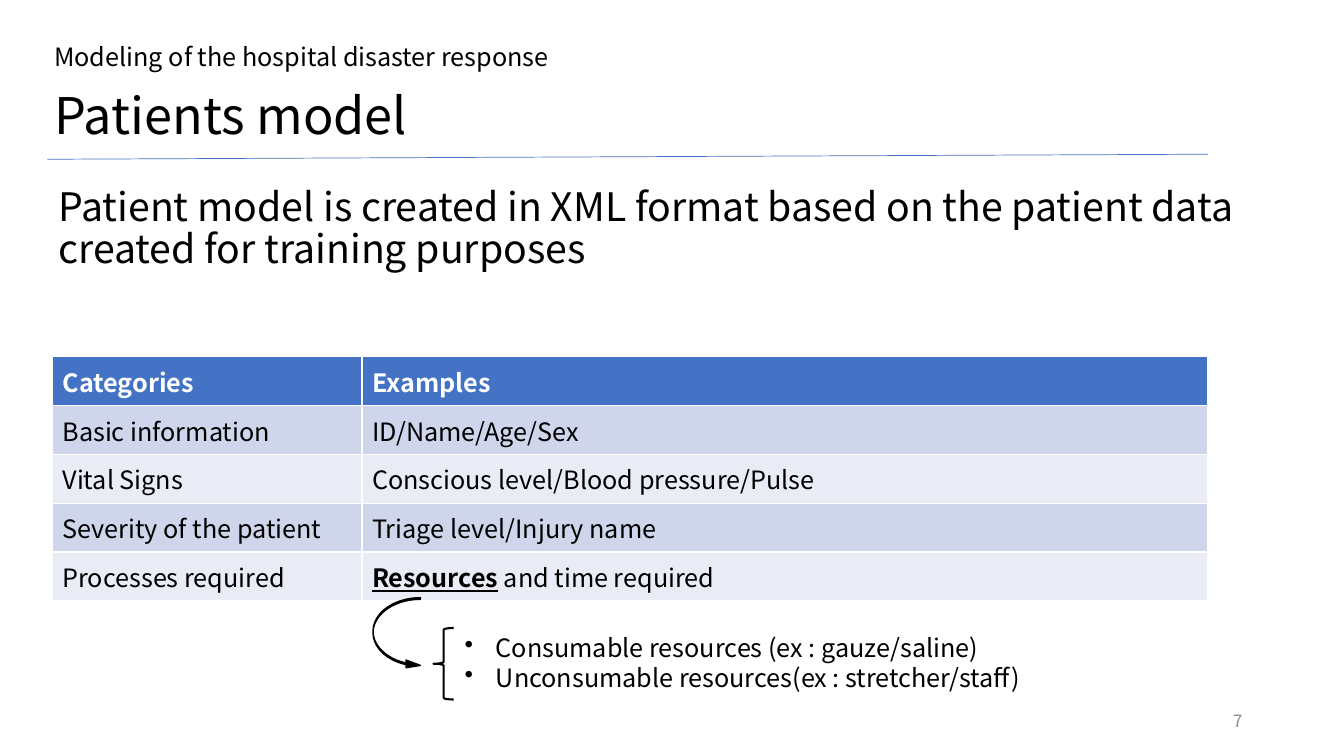
from dataclasses import dataclass

from lxml import etree
from pptx import Presentation
from pptx.dml.color import RGBColor
from pptx.enum.shapes import MSO_CONNECTOR, MSO_SHAPE
from pptx.enum.text import MSO_ANCHOR, MSO_AUTO_SIZE, PP_ALIGN
from pptx.oxml.ns import qn
from pptx.util import Inches, Pt

STRAIGHT = MSO_CONNECTOR.STRAIGHT
LEFT_BRACE = MSO_SHAPE.LEFT_BRACE
CURVED_ARROW = MSO_SHAPE.CURVED_RIGHT_ARROW
TOP, MIDDLE = MSO_ANCHOR.TOP, MSO_ANCHOR.MIDDLE
LEFT, RIGHT = PP_ALIGN.LEFT, PP_ALIGN.RIGHT
NO_FIT = MSO_AUTO_SIZE.NONE


@dataclass(frozen=True)
class Theme:
    """Hold the font, colours and type sizes of the slide."""
    font: str = "Noto Sans CJK JP"
    black: str = "000000"
    white: str = "FFFFFF"
    gray: str = "8C8C8C"
    accent: str = "4472C4"
    bands: tuple = ("CFD5EA", "E9EBF5")
    title: int = 36
    body: int = 28
    text: int = 18
    number: int = 12


THEME = Theme()
CATEGORIES = [
    ("Categories", "Examples"),
    ("Basic information", "ID/Name/Age/Sex"),
    ("Vital Signs", "Conscious level/Blood pressure/Pulse"),
    ("Severity of the patient", "Triage level/Injury name"),
    ("Processes required", "Resources"),
]
RESOURCES = [
    "Consumable resources (ex : gauze/saline)",
    "Unconsumable resources(ex : stretcher/staff)",
]


def color(value):
    """Turn a hex string into a colour."""
    return RGBColor.from_string(value)


def format_runs(text_frame, size, ink=THEME.black, bold=False):
    """Apply the type style to every run of a text frame."""
    for paragraph in text_frame.paragraphs:
        for run in paragraph.runs:
            run.font.name = THEME.font
            run.font.size = Pt(size)
            run.font.bold = bold
            run.font.color.rgb = color(ink)


def set_bullet(paragraph, indent=0, character=None):
    """Set the hanging indent and the bullet of a paragraph."""
    properties = paragraph._p.get_or_add_pPr()
    properties.set("marL", str(Inches(indent)))
    properties.set("indent", str(-Inches(indent)))
    if character:
        etree.SubElement(properties, qn("a:buChar")).set("char", character)
    else:
        etree.SubElement(properties, qn("a:buNone"))


def fill_placeholder(placeholder, text, box, size, space_before):
    """Move a placeholder and set its text at the top left."""
    placeholder.left, placeholder.top, placeholder.width, placeholder.height = map(Inches, box)
    text_frame = placeholder.text_frame
    text_frame.text = text
    text_frame.auto_size = NO_FIT
    text_frame.vertical_anchor = TOP
    paragraph = text_frame.paragraphs[0]
    paragraph.alignment = LEFT
    paragraph.line_spacing = 0.9
    paragraph.space_before = Pt(space_before)
    set_bullet(paragraph)
    format_runs(text_frame, size)


def add_text(slide, text, box, size=THEME.text, ink=THEME.black, wrap=False):
    """Add a text box and return its text frame."""
    text_frame = slide.shapes.add_textbox(*map(Inches, box)).text_frame
    text_frame.word_wrap = wrap
    text_frame.text = text
    format_runs(text_frame, size, ink)
    return text_frame


def add_rule(slide, start, end):
    """Add the thin line below the title."""
    rule = slide.shapes.add_connector(STRAIGHT, *map(Inches, start + end))
    rule.line.color.rgb = color(THEME.accent)
    rule.line.width = Pt(0.5)
    etree.SubElement(rule._element.spPr, qn("a:effectLst"))


def add_mark(slide, kind, box, line_width, fill=None, adjustments=()):
    """Add a black preset shape, filled or open."""
    shape = slide.shapes.add_shape(kind, *map(Inches, box))
    shape.shadow.inherit = False
    shape.line.color.rgb = color(THEME.black)
    shape.line.width = Pt(line_width)
    if fill:
        shape.fill.solid()
        shape.fill.fore_color.rgb = color(fill)
    else:
        shape.fill.background()
    for index, value in enumerate(adjustments):
        shape.adjustments[index] = value


def add_category_table(slide, rows, box, column_widths):
    """Add a table with a header and banded rows, and return it."""
    table = slide.shapes.add_table(len(rows), len(column_widths), *map(Inches, box)).table
    for column, width in zip(table.columns, column_widths):
        column.width = Inches(width)
    for row_index, row in enumerate(rows):
        header = row_index == 0
        fill = THEME.accent if header else THEME.bands[(row_index - 1) % 2]
        for column_index, text in enumerate(row):
            cell = table.cell(row_index, column_index)
            cell.text_frame.text = text
            cell.vertical_anchor = MIDDLE
            cell.fill.solid()
            cell.fill.fore_color.rgb = color(fill)
            format_runs(cell.text_frame, THEME.text, THEME.white if header else THEME.black, header)
    return table


def main():
    """Build the slide and save it."""
    presentation = Presentation()
    presentation.slide_width, presentation.slide_height = Inches(13.33), Inches(7.5)
    slide = presentation.slides.add_slide(presentation.slide_layouts[1])

    add_rule(slide, (0.47, 1.58), (11.98, 1.53))
    add_text(slide, "Modeling of the hospital disaster response", (0.44, 0.36, 5.24, 0.4))
    fill_placeholder(slide.shapes.title, "Patients model", (0.44, 0.85, 11.5, 1.45), THEME.title, 0)
    fill_placeholder(
        slide.placeholders[1],
        "Patient model is created in XML format based on the patient data created for training purposes",
        (0.48, 1.81, 11.94, 4.76), THEME.body, 10)

    number = add_text(slide, "7", (9.42, 6.95, 3, 0.4), THEME.number, THEME.gray, True)
    number.vertical_anchor = MIDDLE
    number.paragraphs[0].alignment = RIGHT

    table = add_category_table(slide, CATEGORIES, (0.52, 3.54, 11.46, 2.42), (3.07, 8.39))
    required = table.cell(len(CATEGORIES) - 1, 1).text_frame
    required.paragraphs[0].add_run().text = " and time required"
    format_runs(required, THEME.text)
    resources_run = required.paragraphs[0].runs[0]
    resources_run.font.bold = resources_run.font.underline = True

    add_mark(slide, LEFT_BRACE, (4.3, 6.23, 0.2, 0.71), 1.5)
    resources = add_text(slide, "\n".join(RESOURCES), (4.51, 6.22, 5.91, 0.71))
    for paragraph in resources.paragraphs:
        set_bullet(paragraph, 0.31, "•")
    add_mark(slide, CURVED_ARROW, (3.7, 5.93, 0.47, 0.71), 1, THEME.black, (0.034, 0.162, 0.303))

    presentation.save("out.pptx")


if __name__ == "__main__":
    main()
